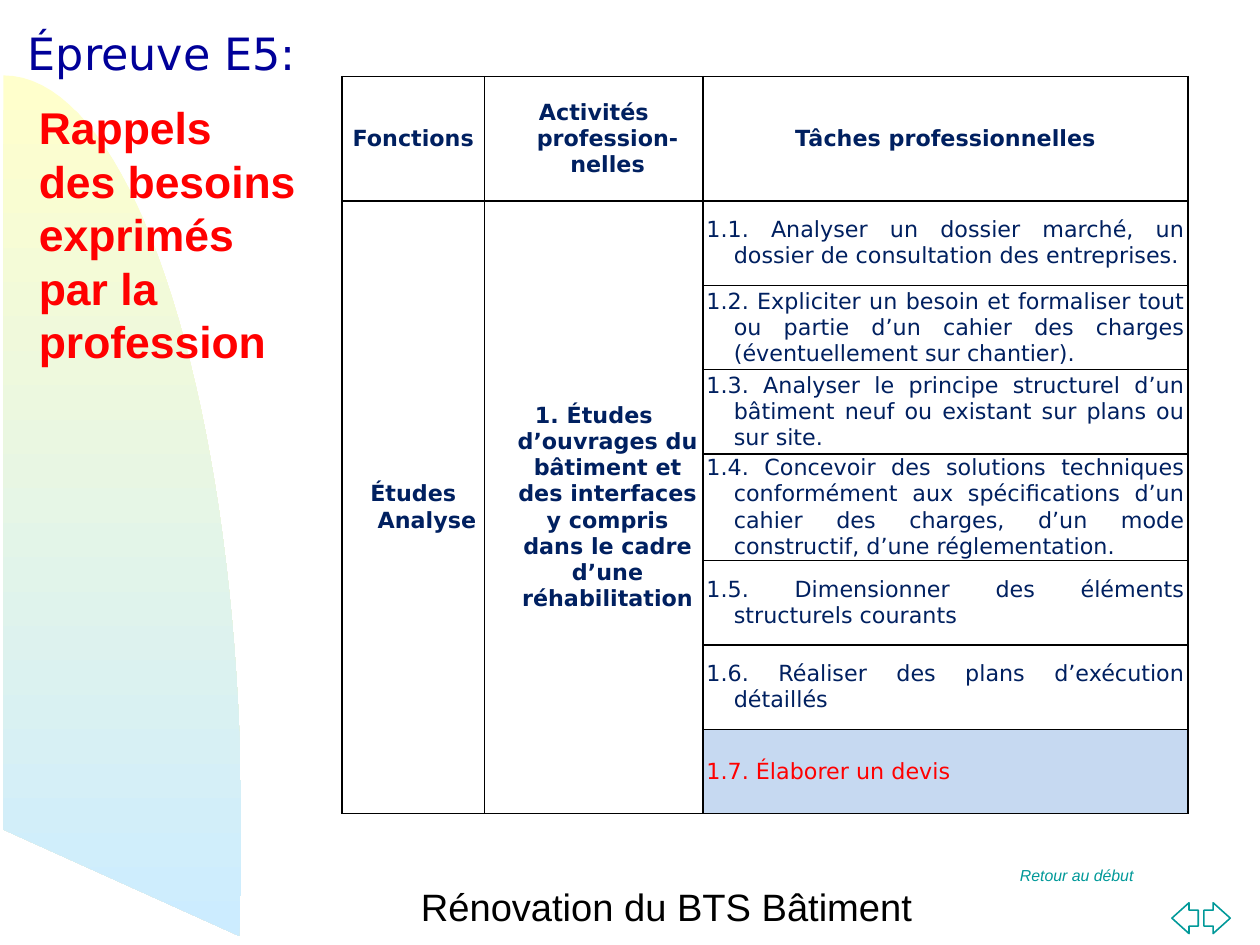
from lxml import etree
from pptx import Presentation
from pptx.dml.color import RGBColor
from pptx.enum.shapes import MSO_SHAPE
from pptx.enum.text import MSO_ANCHOR, PP_ALIGN
from pptx.oxml.ns import qn
from pptx.util import Emu, Pt

LEFT_ARROW, RIGHT_ARROW = MSO_SHAPE.LEFT_ARROW, MSO_SHAPE.RIGHT_ARROW
TOP, MIDDLE = MSO_ANCHOR.TOP, MSO_ANCHOR.MIDDLE
LEFT, CENTER, JUSTIFY = PP_ALIGN.LEFT, PP_ALIGN.CENTER, PP_ALIGN.JUSTIFY

WIDTH, HEIGHT = Pt(793.75), Pt(595.25)
SANS, TABLE_FONT = "Arial", "DejaVu Sans"
COLORS = {
    "title": "000099", "red": "FF0000", "teal": "009999", "navy": "002060",
    "black": "000000", "white": "FFFFFF", "highlight": "C6D9F1",
    "sail_top": "FFFFCC", "sail_bottom": "CCECFF",
}
COLUMN_SHARES = [11.34, 17.33, 38.48]
HEADER_SHARE, TASK_SHARE, TABLE_SHARE = 13.18, 8.92, 78
HEADERS = ["Fonctions", "Activités profession-nelles", "Tâches professionnelles"]
FUNCTION = "Études Analyse"
ACTIVITY = ("1. Études d’ouvrages du bâtiment et des interfaces y compris "
            "dans le cadre d’une réhabilitation")
TASKS = [
    "1.1. Analyser un dossier marché, un dossier de consultation des entreprises.",
    "1.2. Expliciter un besoin et formaliser tout ou partie d’un cahier des charges "
    "(éventuellement sur chantier).",
    "1.3. Analyser le principe structurel d’un bâtiment neuf ou existant sur plans ou sur site.",
    "1.4. Concevoir des solutions techniques conformément aux spécifications d’un cahier "
    "des charges, d’un mode constructif, d’une réglementation.",
    "1.5. Dimensionner des éléments structurels courants",
    "1.6. Réaliser des plans d’exécution détaillés",
    "1.7. Élaborer un devis",
]


def across(percent):
    return Emu(round(WIDTH * percent / 100))


def down(percent):
    return Emu(round(HEIGHT * percent / 100))


def box(left, top, width, height):
    return across(left), down(top), across(width), down(height)


def color(name):
    return RGBColor.from_string(COLORS[name])


def add_run(paragraph, text, size, font, color_name, bold=False, italic=False):
    run = paragraph.add_run()
    run.text = text
    run.font.size = Pt(size)
    run.font.name = font
    run.font.bold = bold
    run.font.italic = italic
    run.font.color.rgb = color(color_name)


def add_text(slide, area, lines, size, font, color_name, align=LEFT, anchor=TOP,
             bold=False, italic=False, inset=True, before=0):
    frame = slide.shapes.add_textbox(*box(*area)).text_frame
    frame.word_wrap = True
    frame.vertical_anchor = anchor
    frame.margin_left = frame.margin_right = across(0.91 if inset else 0)
    frame.margin_top = frame.margin_bottom = down(0.6 if inset else 0)
    paragraph = frame.paragraphs[0]
    paragraph.alignment = align
    paragraph.space_before = Pt(before)
    for index, line in enumerate(lines):
        if index:
            paragraph.add_line_break()
        add_run(paragraph, line, size, font, color_name, bold, italic)


def curve_points(start, first, second, end, steps=40):
    for step in range(1, steps + 1):
        t = step / steps
        weights = ((1 - t) ** 3, 3 * t * (1 - t) ** 2, 3 * t ** 2 * (1 - t), t ** 3)
        x, y = (sum(weight * value for weight, value in zip(weights, values))
                for values in zip(start, first, second, end))
        yield across(x), down(y)


def add_sail(slide):
    peak, side, foot = (0.27, 7.98), (19.15, 87.79), (18.97, 99.03)
    builder = slide.shapes.build_freeform(across(peak[0]), down(peak[1]))
    points = [*curve_points(peak, (10.71, 7.98), (19.15, 43.77), side),
              *curve_points(side, (19.15, 91.54), (19.15, 95.28), foot),
              (across(peak[0]), down(side[1]))]
    builder.add_line_segments(points, close=True)
    sail = builder.convert_to_shape()
    sail.shadow.inherit = False
    sail.line.fill.background()
    sail.fill.gradient()
    sail.fill.gradient_angle = 270
    for stop, name, position in zip(sail.fill.gradient_stops,
                                    ("sail_top", "sail_bottom"), (0, 1)):
        stop.color.rgb = color(name)
        stop.position = position


def add_arrows(slide):
    for index, kind in enumerate((LEFT_ARROW, RIGHT_ARROW)):
        arrow = slide.shapes.add_shape(kind, *box(93.01 + index * 2.54, 95.53, 2.09, 3.26))
        arrow.adjustments[0] = 0.52
        arrow.adjustments[1] = 0.65
        arrow.shadow.inherit = False
        arrow.fill.solid()
        arrow.fill.fore_color.rgb = color("white")
        arrow.line.color.rgb = color("teal")
        arrow.line.width = Pt(1)


def add_borders(cell):
    properties = cell._tc.get_or_add_tcPr()
    for side in ("lnL", "lnR", "lnT", "lnB"):
        line = etree.SubElement(properties, qn(f"a:{side}"), w=str(Pt(1)))
        fill = etree.SubElement(line, qn("a:solidFill"))
        etree.SubElement(fill, qn("a:srgbClr"), val=COLORS["black"])


def fill_cell(cell, text, align=CENTER, bold=True, color_name="navy",
              background="white", spacing=0):
    cell.fill.solid()
    cell.fill.fore_color.rgb = color(background)
    cell.vertical_anchor = MIDDLE
    cell.margin_left = cell.margin_right = across(0.27)
    cell.margin_top = cell.margin_bottom = 0
    paragraph = cell.text_frame.paragraphs[0]
    paragraph.alignment = align
    paragraph.space_before = paragraph.space_after = Pt(spacing)
    indent = across(2.18)
    properties = paragraph._p.get_or_add_pPr()
    properties.set("marL", str(indent))
    properties.set("indent", str(-indent))
    add_run(paragraph, text, 14, TABLE_FONT, color_name, bold)


def add_task_table(slide):
    row_shares = [HEADER_SHARE] + [TASK_SHARE] * len(TASKS)
    area = box(27.13, 8.1, sum(COLUMN_SHARES), TABLE_SHARE)
    frame = slide.shapes.add_table(len(row_shares), len(COLUMN_SHARES), *area)
    table = frame.table
    table.first_row = table.horz_banding = False
    for column, share in zip(table.columns, COLUMN_SHARES):
        column.width = across(share)
    for row, share in zip(table.rows, row_shares):
        row.height = down(share)
    frame.height = down(TABLE_SHARE)
    for cell in table.iter_cells():
        add_borders(cell)
    for index, header in enumerate(HEADERS):
        fill_cell(table.cell(0, index), header)
    for index, text in enumerate((FUNCTION, ACTIVITY)):
        table.cell(1, index).merge(table.cell(len(TASKS), index))
        fill_cell(table.cell(1, index), text)
    for index, task in enumerate(TASKS[:-1], start=1):
        fill_cell(table.cell(index, 2), task, JUSTIFY, bold=False)
    fill_cell(table.cell(len(TASKS), 2), TASKS[-1], JUSTIFY, False, "red", "highlight", 2)


def main():
    presentation = Presentation()
    presentation.slide_width, presentation.slide_height = WIDTH, HEIGHT
    slide = presentation.slides.add_slide(presentation.slide_layouts[6])
    add_sail(slide)
    add_text(slide, (80.04, 91.05, 16.79, 8.83), ["Retour au début"], 10, SANS, "teal",
             italic=True, before=2.5)
    add_arrows(slide)
    add_text(slide, (-0.73, 0.73, 27.13, 9.79), ["Épreuve E5:"], 28, TABLE_FONT, "title",
             CENTER, MIDDLE, inset=False, before=12)
    add_task_table(slide)
    add_text(slide, (2.18, 10.04, 23.23, 33.37),
             ["Rappels", "des besoins exprimés par la profession"], 28, SANS, "red",
             bold=True)
    add_text(slide, (28.31, 92.87, 49.18, 7.13), ["Rénovation du BTS Bâtiment"], 24, SANS,
             "black", CENTER)
    presentation.save("out.pptx")


if __name__ == "__main__":
    main()
